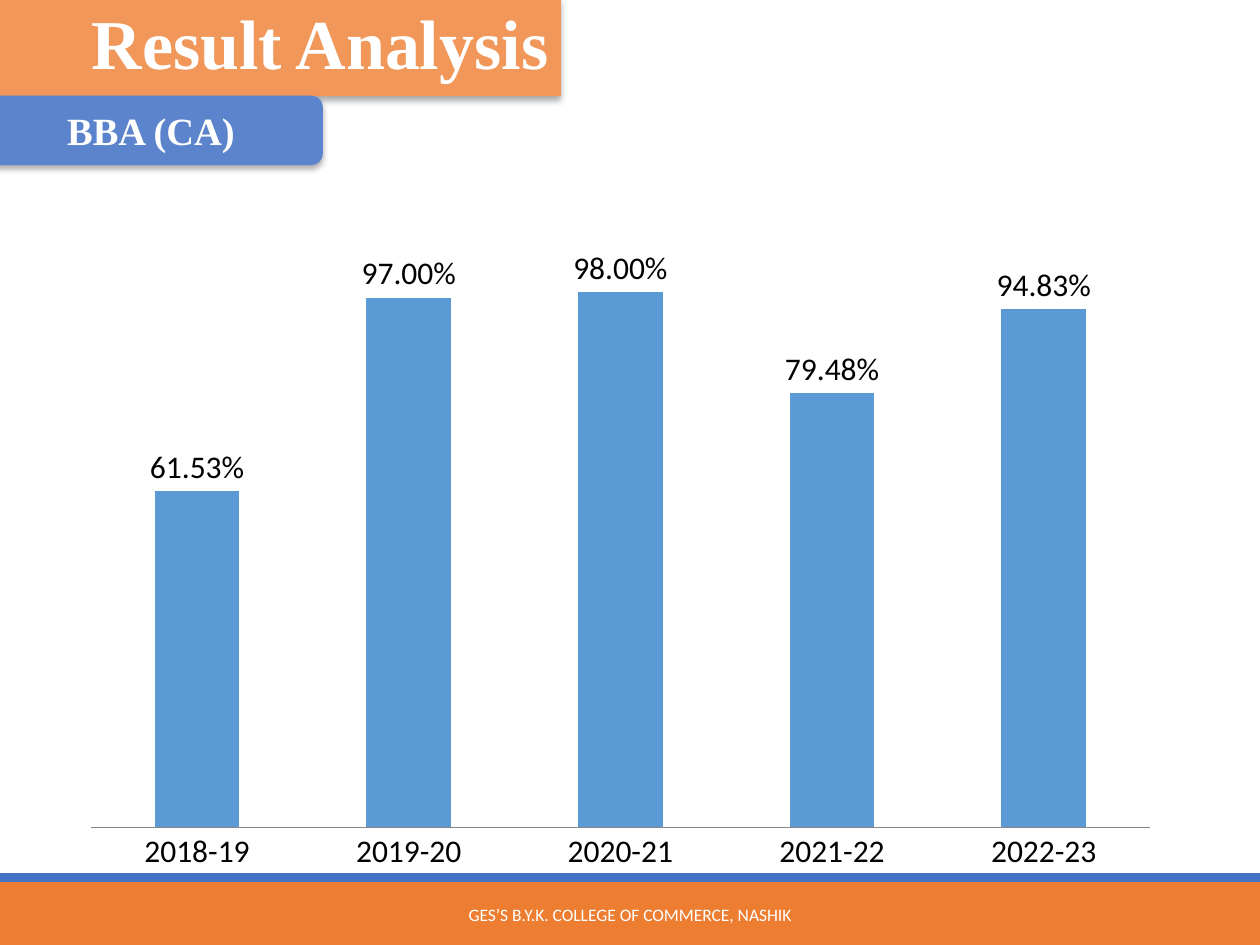
from lxml import etree
from pptx import Presentation
from pptx.chart.data import CategoryChartData
from pptx.dml.color import RGBColor
from pptx.enum.chart import XL_CHART_TYPE, XL_LABEL_POSITION, XL_TICK_MARK
from pptx.enum.shapes import MSO_SHAPE
from pptx.enum.text import MSO_ANCHOR, MSO_AUTO_SIZE, PP_ALIGN
from pptx.oxml import parse_xml
from pptx.oxml.ns import nsdecls, qn
from pptx.util import Pt

COLUMNS = XL_CHART_TYPE.COLUMN_CLUSTERED
OUTSIDE = XL_LABEL_POSITION.OUTSIDE_END
NO_TICK = XL_TICK_MARK.NONE
RECTANGLE = MSO_SHAPE.RECTANGLE
ROUNDED = MSO_SHAPE.ROUNDED_RECTANGLE
MIDDLE = MSO_ANCHOR.MIDDLE
NO_FIT = MSO_AUTO_SIZE.NONE
LEFT, CENTER, RIGHT = PP_ALIGN.LEFT, PP_ALIGN.CENTER, PP_ALIGN.RIGHT

RESULTS = {
    "2018-19": 0.6153,
    "2019-20": 0.97,
    "2020-21": 0.98,
    "2021-22": 0.7948,
    "2022-23": 0.9483,
}


def paint(fill, color):
    """Make a fill solid in a hex colour."""
    fill.solid()
    fill.fore_color.rgb = RGBColor.from_string(color)


def style_font(font, name, size, color, bold=False):
    """Set the face, size, colour and weight of a font."""
    font.name, font.size, font.bold = name, Pt(size), bold
    font.color.rgb = RGBColor.from_string(color)


def write(shape, text, name, size, align, bold=False):
    """Put one white line of text in the middle of a shape."""
    frame = shape.text_frame
    frame.text = text
    frame.word_wrap = True
    frame.auto_size = NO_FIT
    frame.vertical_anchor = MIDDLE
    para = frame.paragraphs[0]
    para.alignment = align
    style_font(para.runs[0].font, name, size, "FFFFFF", bold)


def add_bar(page, kind, box, color):
    """Add a filled shape without an outline."""
    bar = page.shapes.add_shape(kind, *map(Pt, box))
    bar.shadow.inherit = False
    paint(bar.fill, color)
    bar.line.fill.background()
    return bar


def cast_shadow(shape):
    """Give a shape a soft shadow straight below it."""
    properties = shape._element.spPr
    for old in properties.findall(qn("a:effectLst")):
        properties.remove(old)
    properties.append(parse_xml(
        f'<a:effectLst {nsdecls("a")}>'
        f'<a:outerShdw blurRad="{Pt(3.5)}" dist="{Pt(2.2)}" dir="5400000" rotWithShape="0">'
        '<a:srgbClr val="000000"><a:alpha val="32000"/></a:srgbClr>'
        '</a:outerShdw></a:effectLst>'))


def place_title(page, box):
    """Turn the title placeholder into a rounded orange banner."""
    title = page.shapes.title
    title.left, title.top, title.width, title.height = map(Pt, box)
    outline = etree.SubElement(title._element.spPr, qn("a:prstGeom"), prst="roundRect")
    etree.SubElement(outline, qn("a:avLst"))
    paint(title.fill, "F19759")
    title.line.fill.background()
    cast_shadow(title)
    write(title, "Result Analysis", "Times New Roman", 40, RIGHT, True)
    title.text_frame.paragraphs[0].line_spacing = 0.9


def add_course(page, box):
    """Add the blue tab that names the course."""
    tab = add_bar(page, ROUNDED, box, "5C84CC")
    cast_shadow(tab)
    write(tab, "BBA (CA)", "Times New Roman", 22, LEFT, True)
    tab.text_frame.margin_left = Pt(48)


def add_footer(page, box):
    """Add the footer band, the stripe above it and the college name."""
    left, top, width, height = box
    stripe = 5
    add_bar(page, RECTANGLE, box, "ED7D31")
    add_bar(page, RECTANGLE, (left, top - stripe, width, stripe), "4472C4")
    label_width = 285
    label = page.shapes.add_textbox(
        Pt(left + (width - label_width) / 2), Pt(top + 4.5), Pt(label_width), Pt(28.5))
    write(label, "GES’S B.Y.K. COLLEGE OF COMMERCE, NASHIK", "Calibri", 10, CENTER)


def fix_plot_area(chart, x, y, width, height):
    """Set the inner plot area as shares of the chart."""
    area = chart._chartSpace.chart.plotArea
    for old in area.findall(qn("c:layout")):
        area.remove(old)
    sizes = "".join(f'<c:{tag} val="{value}"/>' for tag, value in
                    (("x", x), ("y", y), ("w", width), ("h", height)))
    area.insert(0, parse_xml(
        f'<c:layout {nsdecls("c")}><c:manualLayout><c:layoutTarget val="inner"/>'
        f'<c:xMode val="edge"/><c:yMode val="edge"/>{sizes}</c:manualLayout></c:layout>'))


def add_results(page, box):
    """Add the column chart of yearly results."""
    data = CategoryChartData(number_format="0.00%")
    data.categories = list(RESULTS)
    data.add_series("Series 1", list(RESULTS.values()))
    chart = page.shapes.add_chart(COLUMNS, *map(Pt, box), data).chart
    chart.has_legend = False
    chart.has_title = False
    style_font(chart.font, "Calibri", 18, "000000")
    fix_plot_area(chart, 0.02, 0.02, 0.96, 0.9)

    years, shares = chart.category_axis, chart.value_axis
    years.major_tick_mark = NO_TICK
    years.format.line.color.rgb = RGBColor.from_string("868686")
    shares.minimum_scale, shares.maximum_scale = 0, 1.2
    shares.has_major_gridlines = False
    shares.visible = False

    plot = chart.plots[0]
    plot.vary_by_categories = False
    plot.gap_width, plot.overlap = 150, -25
    paint(plot.series[0].format.fill, "5B9BD5")
    plot.has_data_labels = True
    labels = plot.data_labels
    labels.show_value = True
    labels.number_format, labels.number_format_is_linked = "0.00%", False
    labels.position = OUTSIDE


def main():
    """Build the slide and save it."""
    deck = Presentation()
    deck.slide_width, deck.slide_height = Pt(720), Pt(540)
    page = deck.slides.add_slide(deck.slide_layouts[5])
    add_footer(page, (0, 504, 720, 36))
    add_results(page, (39.6, 90, 630, 416))
    place_title(page, (-34.5, -2, 355, 57))
    add_course(page, (-11.5, 54.7, 196, 39.6))
    deck.save("out.pptx")


if __name__ == "__main__":
    main()
